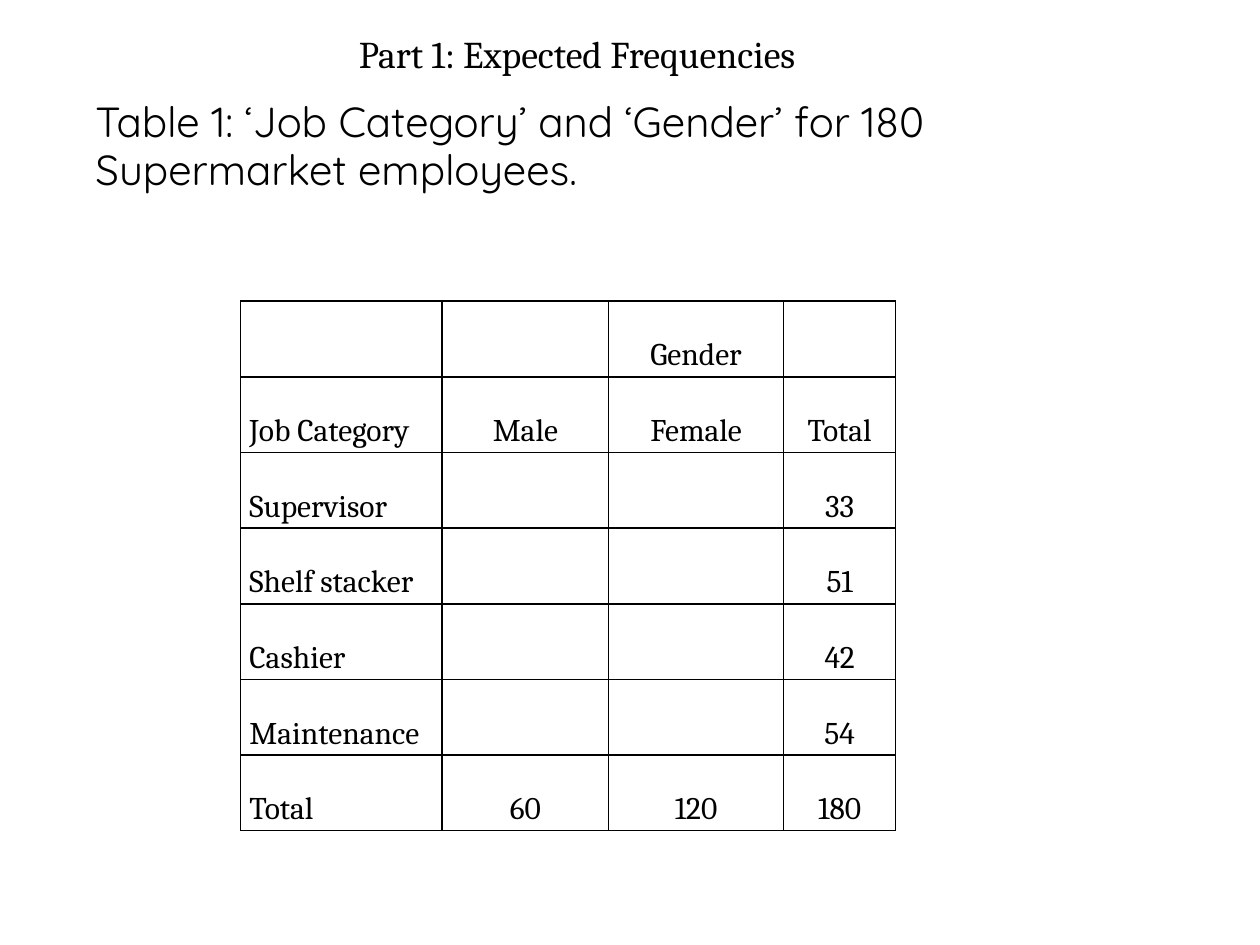
from dataclasses import dataclass

from lxml import etree
from pptx import Presentation
from pptx.dml.color import RGBColor
from pptx.enum.text import MSO_ANCHOR, PP_ALIGN
from pptx.oxml.ns import qn
from pptx.util import Inches, Pt

LEFT, CENTER = PP_ALIGN.LEFT, PP_ALIGN.CENTER
TOP = MSO_ANCHOR.TOP
TITLE_ONLY = 5


@dataclass(frozen=True)
class Theme:
    ink: str = "000000"
    serif: str = "Cambria"
    sans: str = "Quicksand"
    title_size: float = 21.6
    caption_size: float = 24
    cell_size: float = 18
    border: float = 1


THEME = Theme()

COLUMN_WIDTHS = (1.6, 1.32, 1.39, 0.89)
ROW_HEIGHT = 0.58
FREQUENCIES = (
    ("", "", "Gender", ""),
    ("Job Category", "Male", "Female", "Total"),
    ("Supervisor", "", "", "33"),
    ("Shelf stacker", "", "", "51"),
    ("Cashier", "", "", "42"),
    ("Maintenance", "", "", "54"),
    ("Total", "60", "120", "180"),
)


def write(paragraph, text, font, size, align):
    paragraph.text = text
    paragraph.alignment = align
    for run in paragraph.runs:
        run.font.name = font
        run.font.size = Pt(size)
        run.font.color.rgb = RGBColor.from_string(THEME.ink)


def add_title(slide, text):
    title = slide.shapes.title
    title.left, title.top = Inches(0.18), Inches(0.24)
    title.width, title.height = Inches(8.8), Inches(0.64)
    frame = title.text_frame
    frame.vertical_anchor = TOP
    frame.margin_top = 0
    write(frame.paragraphs[0], text, THEME.serif, THEME.title_size, CENTER)


def add_caption(slide, text):
    caption = slide.shapes.add_textbox(
        Inches(0.66), Inches(0.74), Inches(8.8), Inches(5.87))
    frame = caption.text_frame
    frame.word_wrap = True
    paragraph = frame.paragraphs[0]
    write(paragraph, text, THEME.sans, THEME.caption_size, LEFT)
    paragraph.space_before = Pt(20)
    paragraph.line_spacing = 0.95


def add_borders(cell):
    properties = cell._tc.get_or_add_tcPr()
    for position, side in enumerate(("lnL", "lnR", "lnT", "lnB")):
        line = etree.Element(qn(f"a:{side}"), w=str(Pt(THEME.border)))
        fill = etree.SubElement(line, qn("a:solidFill"))
        etree.SubElement(fill, qn("a:srgbClr"), val=THEME.ink)
        properties.insert(position, line)


def fill_cell(cell, text, align):
    cell.fill.background()
    add_borders(cell)
    cell.margin_left = cell.margin_right = Inches(0.07)
    cell.margin_top = cell.margin_bottom = 0
    if text:
        paragraph = cell.text_frame.paragraphs[0]
        write(paragraph, text, THEME.serif, THEME.cell_size, align)
        paragraph.line_spacing = 2.0
        paragraph.space_before = paragraph.space_after = Pt(6)


def add_frequency_table(slide):
    row_count = len(FREQUENCIES)
    table = slide.shapes.add_table(
        row_count, len(COLUMN_WIDTHS), Inches(1.91), Inches(2.39),
        Inches(sum(COLUMN_WIDTHS)), Inches(ROW_HEIGHT * row_count)).table
    table.first_row = table.horz_banding = False
    for column, width in zip(table.columns, COLUMN_WIDTHS):
        column.width = Inches(width)
    for r, values in enumerate(FREQUENCIES):
        table.rows[r].height = Inches(ROW_HEIGHT)
        for c, value in enumerate(values):
            fill_cell(table.cell(r, c), value, CENTER if c else LEFT)


def main():
    presentation = Presentation()
    presentation.slide_width = Inches(10)
    presentation.slide_height = Inches(7.5)
    slide = presentation.slides.add_slide(
        presentation.slide_layouts[TITLE_ONLY])

    # Heading and table caption
    add_title(slide, "Part 1: Expected Frequencies")
    add_caption(slide, "Table 1: ‘Job Category’ and ‘Gender’ for 180 "
                       "Supermarket employees.")

    # Marginal totals, with the expected counts left open
    add_frequency_table(slide)

    presentation.save("out.pptx")


if __name__ == "__main__":
    main()
